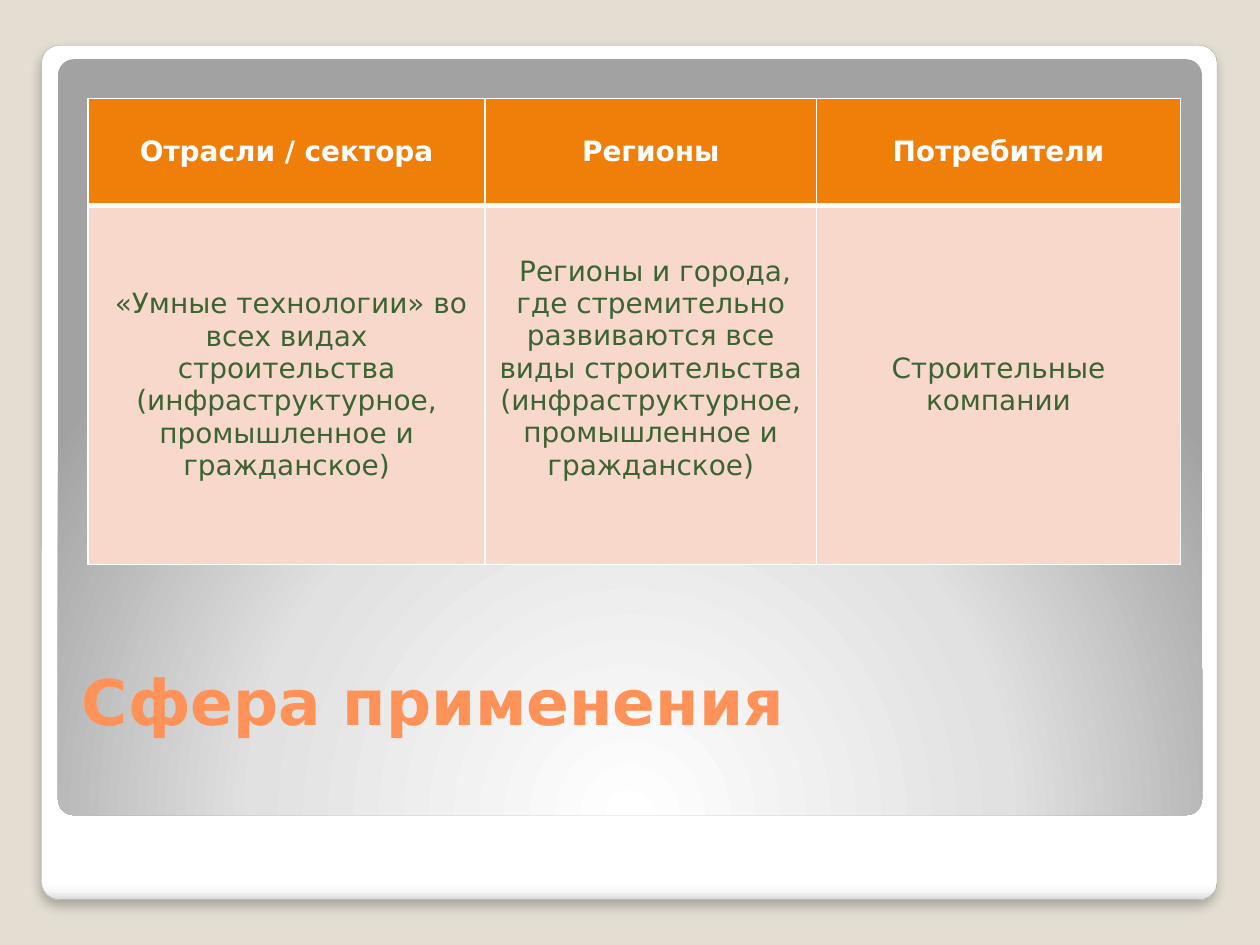
from lxml import etree
from pptx import Presentation
from pptx.dml.color import RGBColor
from pptx.enum.shapes import MSO_SHAPE as Shape
from pptx.enum.text import MSO_ANCHOR as Anchor, MSO_AUTO_SIZE as AutoSize, PP_ALIGN as Align
from pptx.oxml import parse_xml
from pptx.oxml.ns import nsdecls, qn
from pptx.util import Inches, Pt

FONT = "DejaVu Sans"
COLORS = {
    "back": "E3DED1", "edge": "A4A4A4", "shadow": "000000", "white": "FFFFFF",
    "title": "FF9258", "head": "F07F09", "body": "F9D8CC", "text": "3B6432",
}
CARD_STOPS = [(0, "FFFFFF"), (98, "FFFFFF"), (99, "F7F7F7"), (100, "DADADA")]
PANEL_STOPS = [(0, "FFFFFF"), (55, "E1E1E1"), (100, "A2A2A2")]
DOWNWARD = '<a:lin ang="5400000" scaled="0"/>'
FROM_BELOW = ('<a:path path="circle">'
              '<a:fillToRect l="50000" t="175000" r="50000" b="-75000"/></a:path>')

HEADERS = ["Отрасли / сектора", "Регионы", "Потребители"]
KINDS = "(инфраструктурное, промышленное и гражданское)"
DETAILS = [
    f" «Умные технологии» во всех видах строительства {KINDS}",
    f" Регионы и города, где стремительно развиваются все виды строительства {KINDS}",
    "Строительные компании",
]


def rgb(name):
    return RGBColor.from_string(COLORS[name])


def write(tf, text, size=16, color="text", bold=False, align=Align.CENTER):
    p = tf.paragraphs[0]
    p.alignment = align
    r = p.add_run()
    r.text = text
    r.font.name, r.font.size, r.font.bold = FONT, Pt(size), bold
    r.font.color.rgb = rgb(color)


class Deck:
    """Slide style on a grid of 100 columns by 75 rows."""

    def __init__(self):
        self.prs = Presentation()
        self.prs.slide_width, self.prs.slide_height = Inches(10), Inches(7.5)
        self.s = self.prs.slides.add_slide(self.prs.slide_layouts[5])
        fill = self.s.background.fill
        fill.solid()
        fill.fore_color.rgb = rgb("back")

    def grid(self, *cells):
        units = (self.prs.slide_width / 100, self.prs.slide_height / 75) * 2
        return [round(n * unit) for n, unit in zip(cells, units)]

    def panel(self, box, stops, direction, edge=None, shadow=False):
        sp = self.s.shapes.add_shape(Shape.ROUNDED_RECTANGLE, *self.grid(*box))
        sp.adjustments[0] = 0.021
        sp.shadow.inherit = False
        if edge:
            sp.line.color.rgb, sp.line.width = rgb(edge), Pt(0.16)
        else:
            sp.line.fill.background()
        marks = "".join(f'<a:gs pos="{pos * 1000}"><a:srgbClr val="{color}"/></a:gs>'
                        for pos, color in stops)
        sp.element.spPr.find(qn("a:prstGeom")).addnext(parse_xml(
            f'<a:gradFill {nsdecls("a")} rotWithShape="1"><a:gsLst>{marks}</a:gsLst>'
            f'{direction}</a:gradFill>'))
        if shadow:
            sp.element.spPr.find(qn("a:effectLst")).append(parse_xml(
                f'<a:outerShdw {nsdecls("a")} blurRad="{Pt(6)}" dist="{Pt(4)}" '
                f'dir="5400000" algn="t" rotWithShape="0"><a:srgbClr '
                f'val="{COLORS["shadow"]}"><a:alpha val="25000"/></a:srgbClr></a:outerShdw>'))

    def title(self, box, text):
        sp = self.s.shapes.title
        sp.left, sp.top, sp.width, sp.height = self.grid(*box)
        tf = sp.text_frame
        tf.auto_size, tf.vertical_anchor, tf.word_wrap = AutoSize.NONE, Anchor.BOTTOM, True
        write(tf, text, size=36, color="title", bold=True, align=Align.LEFT)
        # Bring the title in front of the panels
        sp.element.getparent().append(sp.element)

    def borders(self, cell, **widths):
        tcPr = cell._tc.get_or_add_tcPr()
        for i, side in enumerate("LRTB"):
            ln = etree.Element(qn(f"a:ln{side}"), w=str(Pt(widths.get(side, 1))))
            fill = etree.SubElement(ln, qn("a:solidFill"))
            etree.SubElement(fill, qn("a:srgbClr"), val=COLORS["white"])
            tcPr.insert(i, ln)

    def table(self, left, top, cols, rows, data):
        box = self.grid(left, top, sum(cols), sum(rows))
        table = self.s.shapes.add_table(len(rows), len(cols), *box).table
        for column, width in zip(table.columns, cols):
            column.width = self.grid(width)[0]
        for row, height in zip(table.rows, rows):
            row.height = self.grid(0, height)[1]
        for i, texts in enumerate(data):
            header = i == 0
            for j, text in enumerate(texts):
                cell = table.cell(i, j)
                cell.vertical_anchor = Anchor.MIDDLE
                cell.fill.solid()
                cell.fill.fore_color.rgb = rgb("head" if header else "body")
                write(cell.text_frame, text, color="white" if header else "text", bold=header)
                self.borders(cell, **({"B": 3} if header else {"T": 3}))
        return table


def main():
    deck = Deck()

    # Card and shaded panel
    deck.panel((3.3, 3.6, 93.3, 67.8), CARD_STOPS, DOWNWARD, edge="edge", shadow=True)
    deck.panel((4.6, 4.7, 90.8, 60), PANEL_STOPS, FROM_BELOW)

    # Title
    deck.title((5.5, 51.6, 59.5, 7.5), "Сфера применения")

    # Fields of use; the regions text sits half a line higher
    table = deck.table(7, 7.8, [31.5, 26.3, 28.9], [8.5, 28.5], [HEADERS, DETAILS])
    table.cell(1, 1).margin_bottom = Inches(0.31)

    deck.prs.save("out.pptx")


if __name__ == "__main__":
    main()
